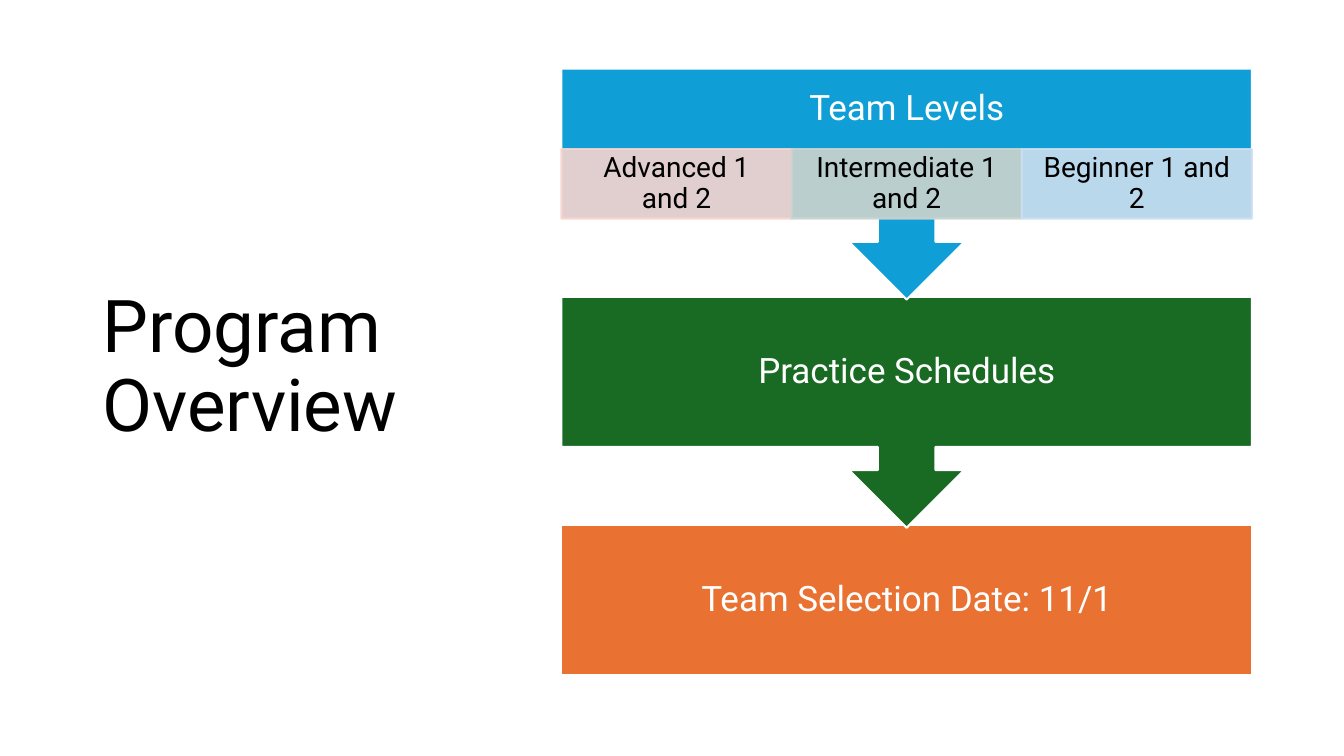
from pptx import Presentation
from pptx.dml.color import RGBColor
from pptx.enum.shapes import MSO_SHAPE as Kind
from pptx.enum.text import MSO_ANCHOR as Anchor, MSO_AUTO_SIZE as Fit, PP_ALIGN as Align
from pptx.oxml.ns import qn
from pptx.util import Cm, Pt
from lxml import etree

FONT = "Roboto"
LEFT, TOP, WIDTH = 14.15, 1.73, 17.4   # column of steps, in cm
STEP, BODY, CALL = 5.75, 3.78, 5.82    # pitch, box height, box with arrow
HEAD = 2.03                            # heading above the levels
STEPS = [
    ("Team Levels", "0F9ED5"),
    ("Practice Schedules", "196B24"),
    ("Team Selection Date: 11/1", "E97132"),
]
LEVELS = [
    ("Advanced 1 and 2", "F7D5CE"),
    ("Intermediate 1 and 2", "CCD4CD"),
    ("Beginner 1 and 2", "CCDFEF"),
]


def paint(color, code):
    color.rgb = RGBColor.from_string(code)


def write(frame, text, size, code, align):
    frame.text = text
    frame.word_wrap = True
    frame.auto_size = Fit.NONE
    frame.vertical_anchor = Anchor.MIDDLE
    para = frame.paragraphs[0]
    para.alignment = align
    para.line_spacing = 0.9
    para.font.name = FONT
    para.font.size = Pt(size)
    paint(para.font.color, code)


def fade(shape, share):
    """Make fill and line partly opaque."""
    for tone in shape._element.spPr.iter(qn("a:srgbClr")):
        etree.SubElement(tone, qn("a:alpha")).set("val", str(share * 1000))


def add_box(slide, kind, area, text, fill, size, ink, pad):
    """Draw a filled box; pad is the side and the top/bottom inset."""
    box = slide.shapes.add_shape(kind, *(Cm(n) for n in area))
    box.shadow.inherit = False
    box.fill.solid()
    paint(box.fill.fore_color, fill)
    paint(box.line.color, fill if ink == "000000" else "FFFFFF")
    box.line.width = Pt(1.5)
    frame = box.text_frame
    frame.margin_left = frame.margin_right = Cm(pad[0])
    frame.margin_top = frame.margin_bottom = Cm(pad[1])
    write(frame, text, size, ink, Align.CENTER)
    return box


def add_title(slide, text):
    title = slide.shapes.title
    title.left, title.top = Cm(2.33), Cm(1.55)
    title.width, title.height = Cm(9.37), Cm(15.47)
    write(title.text_frame, text, 52, "000000", Align.LEFT)


def add_steps(slide):
    # Last step first, so each arrow lies over the next box
    for i, (text, fill) in reversed(list(enumerate(STEPS))):
        last = i == len(STEPS) - 1
        kind = Kind.RECTANGLE if last else Kind.DOWN_ARROW_CALLOUT
        area = (LEFT, TOP + i * STEP, WIDTH, BODY if last else CALL)
        box = add_box(slide, kind, area, text, fill, 25, "FFFFFF", (0.48, 0.48))
        if i == 0:
            # Keep the heading clear of the levels
            box.text_frame.margin_bottom = Cm(BODY - HEAD + 0.48)


def add_levels(slide):
    wide = WIDTH / len(LEVELS)
    for i, (text, fill) in enumerate(LEVELS):
        area = (LEFT + i * wide, TOP + HEAD, wide, BODY - HEAD)
        box = add_box(slide, Kind.RECTANGLE, area, text, fill, 20, "000000", (0.41, 0.08))
        fade(box, 90)


def main():
    deck = Presentation()
    deck.slide_width, deck.slide_height = Cm(33.87), Cm(19.05)
    slide = deck.slides.add_slide(deck.slide_layouts[5])
    add_title(slide, "Program Overview")
    add_steps(slide)
    add_levels(slide)
    deck.save("out.pptx")


if __name__ == "__main__":
    main()
